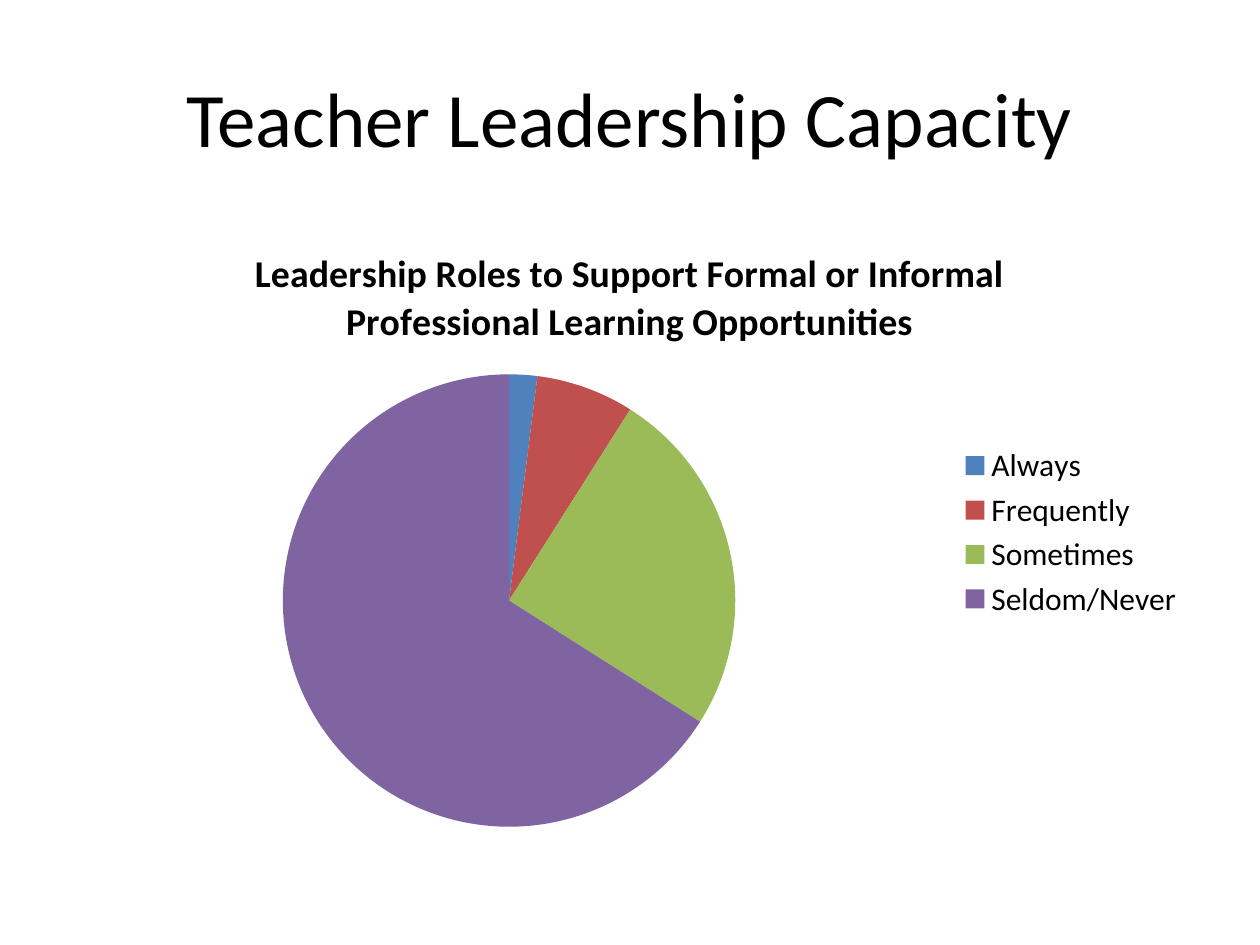
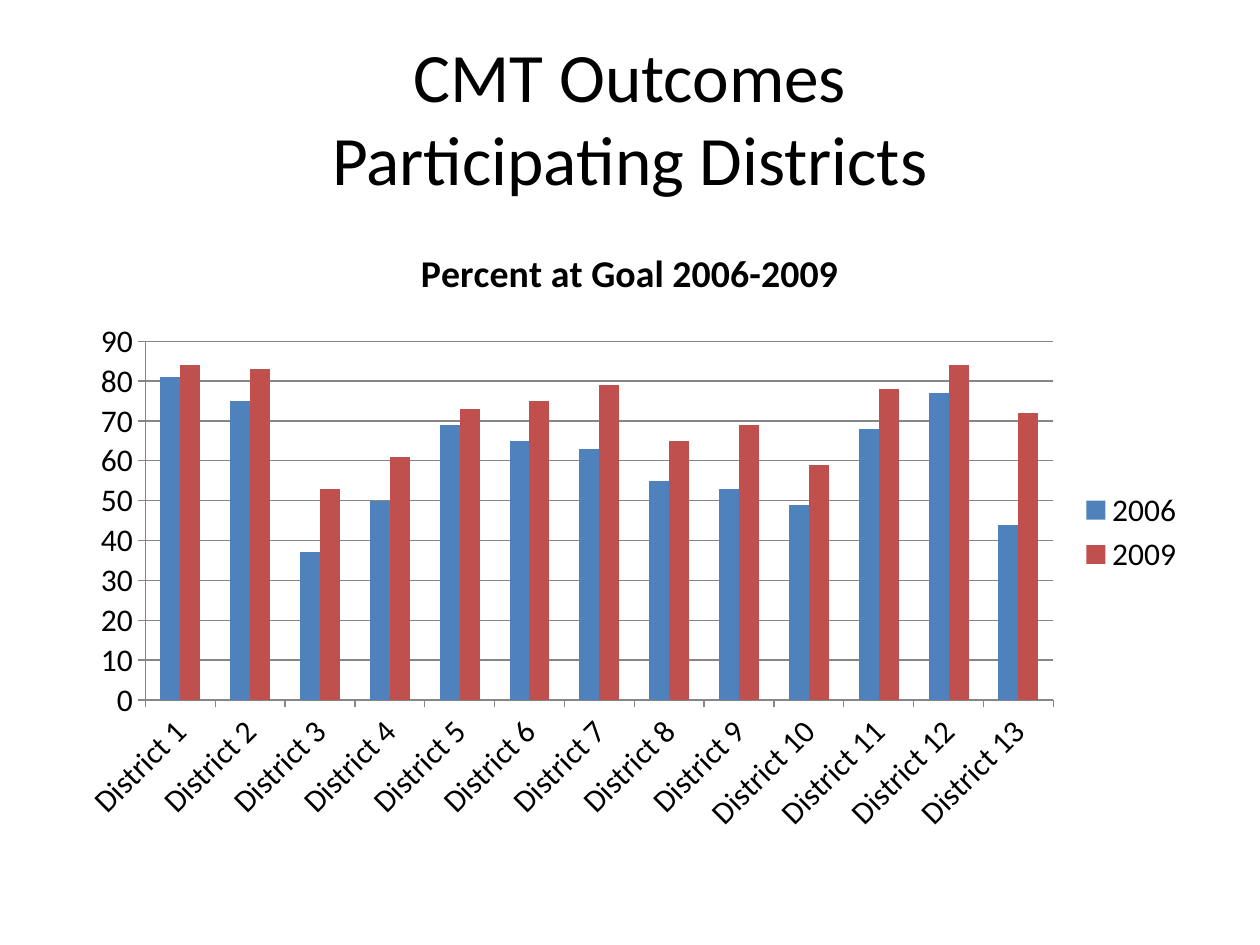
from pptx import Presentation
from pptx.chart.data import CategoryChartData
from pptx.dml.color import RGBColor
from pptx.enum.chart import XL_CHART_TYPE as CT, XL_LEGEND_POSITION as LP, XL_TICK_MARK as TM
from pptx.enum.text import MSO_ANCHOR, PP_ALIGN
from pptx.util import Inches, Pt

FONT = "Calibri"
COLORS = {
    "text": "000000", "axis": "868686", "background": "FFFFFF",
    "blue": "4F81BD", "red": "C0504D", "green": "9BBB59", "purple": "8064A2",
}
ACCENTS = ["blue", "red", "green", "purple"]
TITLE_BOX = (0.5, 0.3, 9, 1.25)
CHART_BOX = (0.5, 1.75, 9, 4.95)

ROLES_TITLE = "Leadership Roles to Support Formal or Informal Professional Learning Opportunities"
ROLES = {"Always": 2, "Frequently": 7, "Sometimes": 25, "Seldom/Never": 66}
GOALS = {
    "2006": [81, 75, 37, 50, 69, 65, 63, 55, 53, 49, 68, 77, 44],
    "2009": [84, 83, 53, 61, 73, 75, 79, 65, 69, 59, 78, 84, 72],
}


def rgb(name):
    """Return the named colour."""
    return RGBColor.from_string(COLORS[name])


def style_font(font, size, bold=False):
    """Apply the shared typeface and text colour."""
    font.name, font.size, font.bold = FONT, Pt(size), bold
    font.color.rgb = rgb("text")


def fill_solid(fill, name):
    """Fill with one named colour."""
    fill.solid()
    fill.fore_color.rgb = rgb(name)


def add_title(s, text, size, box=TITLE_BOX):
    """Add the centred slide title."""
    tf = s.shapes.add_textbox(*map(Inches, box)).text_frame
    tf.word_wrap = True
    tf.vertical_anchor = MSO_ANCHOR.MIDDLE
    p = tf.paragraphs[0]
    p.text = text
    p.alignment = PP_ALIGN.CENTER
    for r in p.runs:
        style_font(r.font, size)


def add_chart(s, kind, title, categories, series, box=CHART_BOX):
    """Add a chart with the shared title, legend and text style."""
    data = CategoryChartData()
    data.categories = categories
    for name, values in series.items():
        data.add_series(name, values)
    chart = s.shapes.add_chart(kind, *map(Inches, box), data).chart
    style_font(chart.font, 18)
    chart.has_title = True
    tf = chart.chart_title.text_frame
    tf.text = title
    style_font(tf.paragraphs[0].runs[0].font, 21.6, bold=True)
    chart.chart_title.include_in_layout = False
    chart.has_legend = True
    chart.legend.position = LP.RIGHT
    chart.legend.include_in_layout = False
    return chart


def style_axis(axis):
    """Give an axis its grey line, outward ticks and labels."""
    axis.major_tick_mark, axis.minor_tick_mark = TM.OUTSIDE, TM.NONE
    axis.format.line.color.rgb = rgb("axis")
    axis.format.line.width = Pt(0.75)
    style_font(axis.tick_labels.font, 18)


def add_roles_pie(s):
    """Add the pie of leadership roles."""
    chart = add_chart(s, CT.PIE, ROLES_TITLE, list(ROLES), {ROLES_TITLE: list(ROLES.values())})
    plot = chart.plots[0]
    plot.vary_by_categories = True
    for i, name in enumerate(ACCENTS):
        fill_solid(plot.series[0].points[i].format.fill, name)


def add_goal_columns(s):
    """Add the columns of percent at goal by district."""
    districts = [f"District {n}" for n in range(1, len(GOALS["2006"]) + 1)]
    chart = add_chart(s, CT.COLUMN_CLUSTERED, "Percent at Goal 2006-2009", districts, GOALS)
    plot = chart.plots[0]
    plot.vary_by_categories = False
    plot.gap_width, plot.overlap = 150, 0
    for series, name in zip(plot.series, ACCENTS):
        fill_solid(series.format.fill, name)
    for axis in (chart.category_axis, chart.value_axis):
        style_axis(axis)
    chart.category_axis._element.txPr.bodyPr.set("rot", "-2700000")
    axis = chart.value_axis
    axis.minimum_scale, axis.maximum_scale, axis.major_unit = 0, 90, 10
    axis.has_major_gridlines = True
    line = axis.major_gridlines.format.line
    line.color.rgb = rgb("axis")
    line.width = Pt(0.75)


def add_slide(prs, title, size, draw_chart):
    """Add one slide with a title above a chart."""
    s = prs.slides.add_slide(prs.slide_layouts[6])
    fill_solid(s.background.fill, "background")
    add_title(s, title, size)
    draw_chart(s)


def main():
    """Build and save both slides."""
    prs = Presentation()
    prs.slide_width, prs.slide_height = Inches(10), Inches(7.5)
    add_slide(prs, "Teacher Leadership Capacity", 44, add_roles_pie)
    add_slide(prs, "CMT Outcomes\vParticipating Districts", 39.6, add_goal_columns)
    prs.save("out.pptx")


if __name__ == "__main__":
    main()
